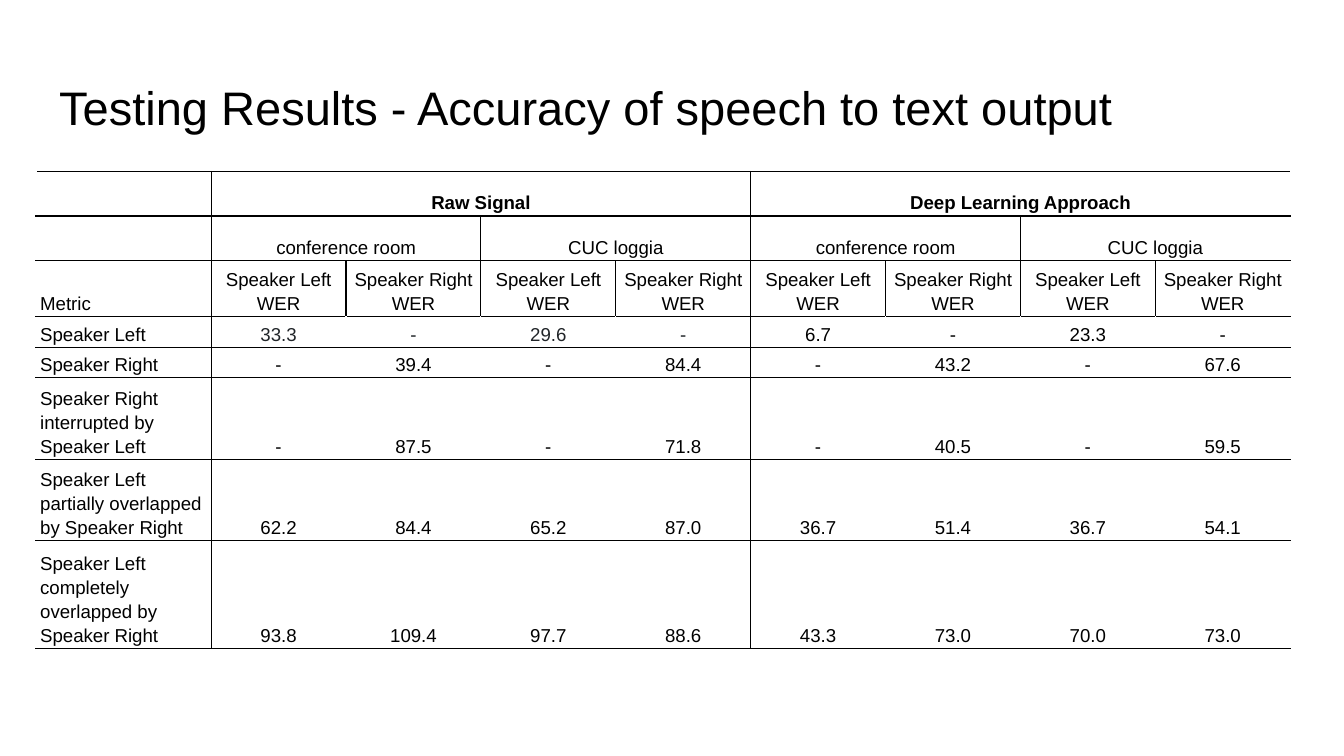
from dataclasses import dataclass

from lxml import etree
from pptx import Presentation
from pptx import util as u
from pptx.dml.color import RGBColor
from pptx.enum import text
from pptx.oxml.ns import qn

COLORS = {"ink": "000000", "soft": "212529", "paper": "FFFFFF"}
FONT = "Arial"
COLS = 9
METHOD_EDGES = {1, 5}


@dataclass
class Style:
    size: float = 10
    color: str = "ink"
    bold: bool = False
    align: text.PP_ALIGN = text.PP_ALIGN.CENTER
    spacing: float = 1.15
    after: float = 0


@dataclass
class HeaderRow:
    labels: list[str]
    span: int
    height: float
    bold: bool = False
    stub: str = ""


@dataclass
class Result:
    metric: str
    raw: list[str]
    deep: list[str]
    raw_style: Style
    height: float


LABEL = Style(align=text.PP_ALIGN.LEFT)
VALUE = Style()
RAW = Style(spacing=1)
RAW_FIRST = Style(color="soft", spacing=1.2, after=2)

HEADERS = [
    HeaderRow(["Raw Signal", "Deep Learning Approach"], 4, 0.82, bold=True),
    HeaderRow(["conference room", "CUC loggia"] * 2, 2, 0.82),
    HeaderRow(["Speaker Left WER", "Speaker Right WER"] * 4, 1, 1.01, stub="Metric"),
]
RESULTS = [
    Result("Speaker Left", ["33.3", "-", "29.6", "-"],
           ["6.7", "-", "23.3", "-"], RAW_FIRST, 0.57),
    Result("Speaker Right", ["-", "39.4", "-", "84.4"],
           ["-", "43.2", "-", "67.6"], RAW, 0.57),
    Result("Speaker Right interrupted by Speaker Left", ["-", "87.5", "-", "71.8"],
           ["-", "40.5", "-", "59.5"], RAW, 1.46),
    Result("Speaker Left partially overlapped by Speaker Right",
           ["62.2", "84.4", "65.2", "87.0"], ["36.7", "51.4", "36.7", "54.1"],
           RAW, 1.46),
    Result("Speaker Left completely overlapped by Speaker Right",
           ["93.8", "109.4", "97.7", "88.6"], ["43.3", "73.0", "70.0", "73.0"],
           RAW, 1.93),
]


def write(tf, content: str, style: Style) -> None:
    tf.text = content
    p = tf.paragraphs[0]
    p.alignment = style.align
    p.line_spacing = style.spacing
    p.space_after = u.Pt(style.after)
    for r in p.runs:
        r.font.name = FONT
        r.font.size = u.Pt(style.size)
        r.font.bold = style.bold
        r.font.color.rgb = RGBColor.from_string(COLORS[style.color])


def add_border(cell, side: str, color: str) -> None:
    tc_pr = cell._tc.get_or_add_tcPr()
    ln = etree.SubElement(tc_pr, qn(f"a:ln{side}"), w=str(u.Pt(0.75)))
    fill = etree.SubElement(ln, qn("a:solidFill"))
    etree.SubElement(fill, qn("a:srgbClr"), val=COLORS[color])


def format_cell(cell, col: int, edges: set[int]) -> None:
    cell.margin_left = cell.margin_right = u.Cm(0.08)
    cell.margin_top = cell.margin_bottom = u.Cm(0.04)
    cell.vertical_anchor = text.MSO_ANCHOR.BOTTOM
    end = col + (cell.span_width if cell.is_merge_origin else 1)
    add_border(cell, "L", "ink" if col in edges else "paper")
    add_border(cell, "R", "ink" if end in edges else "paper")
    add_border(cell, "T", "ink")
    add_border(cell, "B", "ink")
    cell.fill.background()


def add_title(s, content: str) -> None:
    sp = s.shapes.add_textbox(u.Cm(0.87), u.Cm(1.21), u.Cm(23.67), u.Cm(1.6))
    tf = sp.text_frame
    tf.word_wrap = True
    tf.vertical_anchor = text.MSO_ANCHOR.BOTTOM
    tf.margin_left = tf.margin_right = u.Cm(0.25)
    tf.margin_top = tf.margin_bottom = u.Cm(0.25)
    write(tf, content, Style(size=25.2, align=text.PP_ALIGN.LEFT, spacing=1))


def fill_header(table, row: int, header: HeaderRow) -> None:
    if header.stub:
        write(table.cell(row, 0).text_frame, header.stub, LABEL)
    for i, label in enumerate(header.labels):
        col = 1 + i * header.span
        cell = table.cell(row, col)
        if header.span > 1:
            cell.merge(table.cell(row, col + header.span - 1))
        write(cell.text_frame, label, Style(bold=header.bold))
    edges = set(range(1, COLS, header.span))
    for col in range(COLS):
        format_cell(table.cell(row, col), col, edges)


def fill_result(table, row: int, result: Result) -> None:
    entries = [(result.metric, LABEL)]
    entries += [(value, result.raw_style) for value in result.raw]
    entries += [(value, VALUE) for value in result.deep]
    for col, (content, style) in enumerate(entries):
        cell = table.cell(row, col)
        write(cell.text_frame, content, style)
        format_cell(cell, col, METHOD_EDGES)


def add_results_table(s) -> None:
    heights = [row.height for row in HEADERS + RESULTS]
    frame = s.shapes.add_table(len(heights), COLS, u.Cm(0.68), u.Cm(3.24),
                               u.Cm(23.71), u.Cm(sum(heights)))
    table = frame.table
    table.first_row = False
    table.horz_banding = False
    for i, column in enumerate(table.columns):
        column.width = u.Cm(2.55 if i else 3.31)
    for row, height in zip(table.rows, heights):
        row.height = u.Cm(height)
    for i, header in enumerate(HEADERS):
        fill_header(table, i, header)
    for i, result in enumerate(RESULTS, len(HEADERS)):
        fill_result(table, i, result)


def main() -> None:
    prs = Presentation()
    prs.slide_width, prs.slide_height = u.Cm(25.4), u.Cm(14.29)
    s = prs.slides.add_slide(prs.slide_layouts[6])
    add_title(s, "Testing Results - Accuracy of speech to text output")
    add_results_table(s)
    prs.save("out.pptx")


if __name__ == "__main__":
    main()
